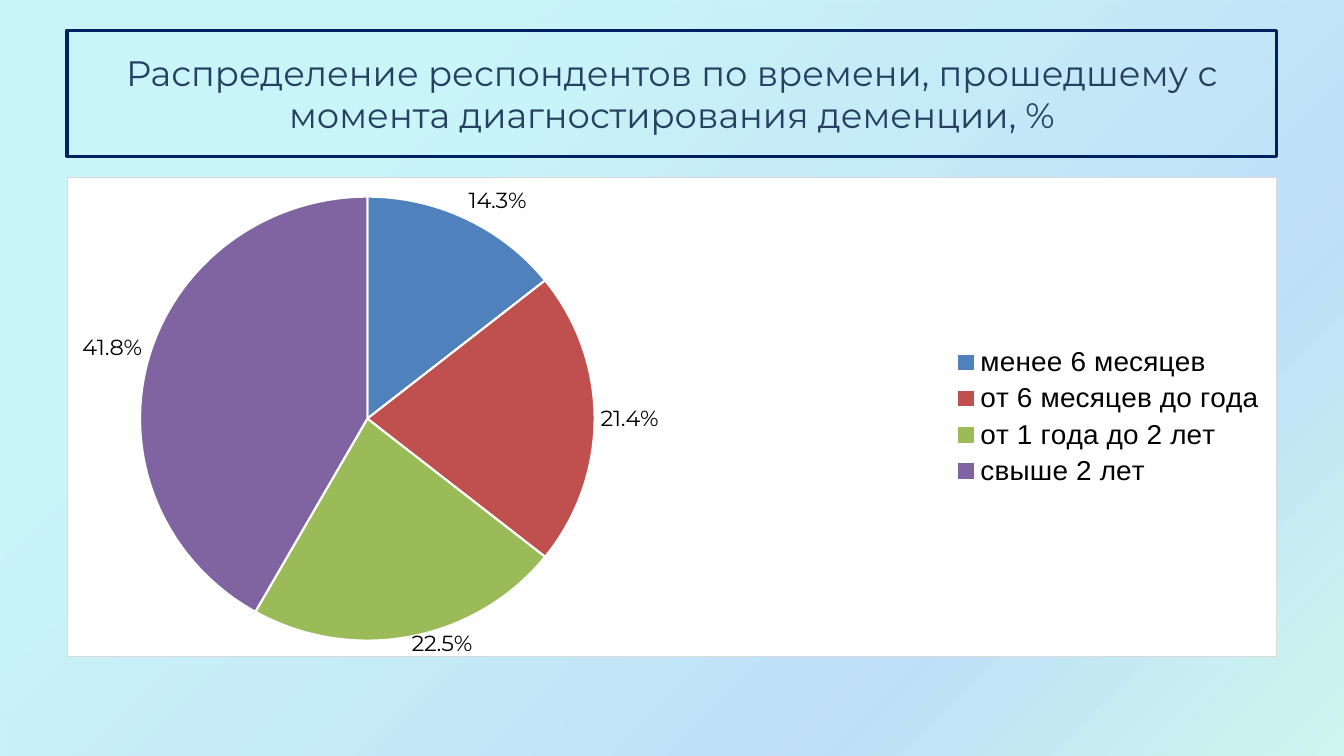
from lxml import etree
from pptx import Presentation
from pptx.chart.data import CategoryChartData
from pptx.dml.color import RGBColor
from pptx.enum import chart as chart_enum, shapes, text
from pptx.oxml import parse_xml
from pptx.oxml.ns import nsdecls, qn
from pptx.util import Cm, Pt

COLORS = {
    "navy": "002060", "title": "254061", "black": "000000",
    "white": "FFFFFF", "border": "D9D9D9",
    "aqua": "21D6E0", "azure": "0087E6", "mint": "03D4A8",
}
BACKDROP_STOPS = [("aqua", 25, 23), ("azure", 75, 25), ("mint", 100, 18)]
PERIODS = [
    ("менее 6 месяцев", 0.143, "4F81BD"),
    ("от 6 месяцев до года", 0.214, "C0504D"),
    ("от 1 года до 2 лет", 0.225, "9BBB59"),
    ("свыше 2 лет", 0.418, "8064A2"),
]
PLOT_LAYOUT = {"x": 0.06, "y": 0.008, "w": 0.376, "h": 0.992}
SLIDE_WIDTH, SLIDE_HEIGHT = Cm(33.87), Cm(19.05)


def rgb(name):
    return RGBColor.from_string(COLORS[name])


def set_font(font, size, name="Montserrat", color="black"):
    font.size = Pt(size)
    font.name = name
    font.color.rgb = rgb(color)


def write_text(shape, content, align=text.PP_ALIGN.CENTER, **font_format):
    frame = shape.text_frame
    frame.word_wrap = True
    frame.vertical_anchor = text.MSO_ANCHOR.MIDDLE
    paragraph = frame.paragraphs[0]
    paragraph.alignment = align
    run = paragraph.add_run()
    run.text = content
    set_font(run.font, **font_format)


def add_rectangle(slide, box):
    shape = slide.shapes.add_shape(shapes.MSO_SHAPE.RECTANGLE, *box)
    shape.shadow.inherit = False
    return shape


def add_backdrop(slide, box):
    """Cover the box with a translucent diagonal gradient."""
    shape = add_rectangle(slide, box)
    shape.line.fill.background()
    stops = "".join(
        f'<a:gs pos="{position * 1000}"><a:srgbClr val="{COLORS[name]}">'
        f'<a:alpha val="{alpha * 1000}"/></a:srgbClr></a:gs>'
        for name, position, alpha in BACKDROP_STOPS)
    gradient = parse_xml(
        f'<a:gradFill {nsdecls("a")} rotWithShape="1"><a:gsLst>{stops}</a:gsLst>'
        '<a:lin ang="2700000" scaled="0"/></a:gradFill>')
    shape._element.spPr.find(qn("a:prstGeom")).addnext(gradient)


def add_title(slide, box, content):
    shape = add_rectangle(slide, box)
    shape.fill.background()
    shape.line.color.rgb = rgb("navy")
    shape.line.width = Pt(2.25)
    write_text(shape, content, size=25.2, color="title")


def frame_chart(chart):
    """Give the chart area its fill and border, and the pie its place."""
    chart_space = chart._chartSpace
    area = parse_xml(
        f'<c:spPr {nsdecls("c", "a")}><a:solidFill><a:srgbClr val="{COLORS["white"]}"/>'
        f'</a:solidFill><a:ln w="{Pt(0.75)}"><a:solidFill>'
        f'<a:srgbClr val="{COLORS["border"]}"/></a:solidFill></a:ln></c:spPr>')
    chart_space.find(qn("c:chart")).addnext(area)

    plot_area = chart_space.find(".//" + qn("c:plotArea"))
    for layout in plot_area.findall(qn("c:layout")):
        plot_area.remove(layout)
    layout = etree.Element(qn("c:layout"))
    manual = etree.SubElement(layout, qn("c:manualLayout"))
    settings = {"layoutTarget": "inner", "xMode": "edge", "yMode": "edge", **PLOT_LAYOUT}
    for tag, value in settings.items():
        etree.SubElement(manual, qn(f"c:{tag}")).set("val", str(value))
    plot_area.insert(0, layout)


def add_period_chart(slide, box):
    data = CategoryChartData(number_format="0.0%")
    data.categories = [name for name, _, _ in PERIODS]
    data.add_series("Series 1", [share for _, share, _ in PERIODS])
    chart = slide.shapes.add_chart(chart_enum.XL_CHART_TYPE.PIE, *box, data).chart
    chart.has_title = False
    set_font(chart.font, 10, "Arial")
    chart.has_legend = True
    chart.legend.position = chart_enum.XL_LEGEND_POSITION.RIGHT
    chart.legend.include_in_layout = False
    set_font(chart.legend.font, 20, "Arial")

    plot = chart.plots[0]
    plot.vary_by_categories = True
    for index, (_, _, color) in enumerate(PERIODS):
        slice_format = plot.series[0].points[index].format
        slice_format.fill.solid()
        slice_format.fill.fore_color.rgb = RGBColor.from_string(color)
        slice_format.line.color.rgb = rgb("white")
        slice_format.line.width = Pt(1.5)

    labels = plot.series[0].data_labels
    labels.show_value = True
    labels.show_percentage = False
    labels.number_format = "0.0%"
    labels.number_format_is_linked = False
    labels.position = chart_enum.XL_LABEL_POSITION.OUTSIDE_END
    set_font(labels.font, 16)
    frame_chart(chart)


def main():
    presentation = Presentation()
    presentation.slide_width, presentation.slide_height = SLIDE_WIDTH, SLIDE_HEIGHT
    slide = presentation.slides.add_slide(presentation.slide_layouts[6])
    margin = Cm(1.69)
    width = SLIDE_WIDTH - 2 * margin
    add_backdrop(slide, (0, 0, SLIDE_WIDTH, Cm(19.48)))
    add_title(slide, (margin, Cm(0.76), width, Cm(3.18)),
              "Распределение респондентов по времени, прошедшему с момента "
              "диагностирования деменции, %")
    add_period_chart(slide, (margin, Cm(4.45), width, Cm(12.38)))
    presentation.save("out.pptx")


if __name__ == "__main__":
    main()
